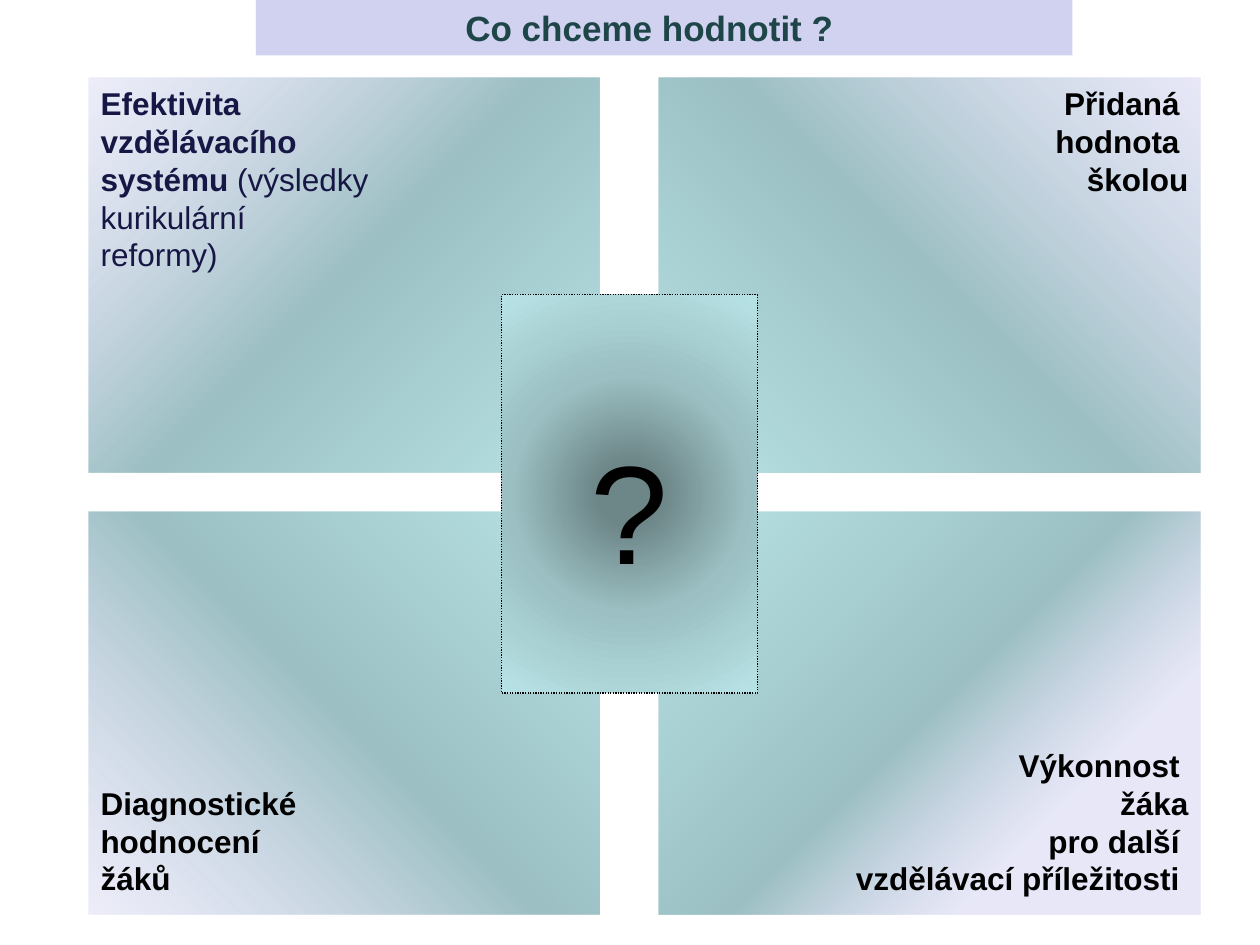
from lxml.etree import SubElement
from pptx import Presentation
from pptx.dml.color import RGBColor
from pptx.enum.dml import MSO_LINE
from pptx.enum.shapes import MSO_SHAPE
from pptx.enum.text import MSO_ANCHOR as ANCHOR, MSO_AUTO_SIZE, PP_ALIGN as ALIGN
from pptx.oxml.ns import qn
from pptx.util import Pt

LAVENDER = RGBColor(0xD1, 0xD1, 0xF0)
TEAL = RGBColor(0x9B, 0xBF, 0xC2)
AQUA = RGBColor(0xB8, 0xE3, 0xE6)
SLATE = RGBColor(0x6D, 0x86, 0x88)
NAVY = RGBColor(0x17, 0x17, 0x45)
PINE = RGBColor(0x1E, 0x46, 0x49)
BLACK = RGBColor(0, 0, 0)

TITLE = "Co chceme hodnotit ?"
TITLE_BOX = (146.2, 0, 466.6, 31.7)
CENTRE_MARK = "?"
CENTRE_BOX = (286.6, 168.5, 146.2, 227.5)

# Columns as (left, width), rows as (top, height)
COLUMNS = [(50.4, 292.3), (376.6, 309.6)]
ROWS = [(44.6, 225.4), (292.3, 230.4)]

# Column, row, text colour, start and opacity (%) of the corner colour, lines.
# A line is a list of (text, bold) runs.
QUADRANTS = [
    (0, 0, NAVY, 0, 38, [
        [("Efektivita", True)],
        [("vzdělávacího", True)],
        [("systému ", True), ("(výsledky", False)],
        [("kurikulární", False)],
        [("reformy)", False)],
    ]),
    (1, 0, BLACK, 0, 48, [
        [("Přidaná ", True)], [("hodnota ", True)], [("školou", True)],
    ]),
    (1, 1, BLACK, 26, 49, [
        [("Výkonnost ", True)],
        [("žáka", True)],
        [("pro další ", True)],
        [("vzdělávací příležitosti ", True)],
    ]),
    (0, 1, BLACK, 0, 37, [
        [("Diagnostické", True)], [("hodnocení", True)], [("žáků", True)],
    ]),
]


def write(shape, lines, *, size, color, align, anchor, spacing=None,
          top=3.6, right=7.2, bottom=3.6):
    frame = shape.text_frame
    frame.word_wrap = True
    frame.auto_size = MSO_AUTO_SIZE.NONE
    frame.vertical_anchor = anchor
    frame.margin_left, frame.margin_right = Pt(7.2), Pt(right)
    frame.margin_top, frame.margin_bottom = Pt(top), Pt(bottom)
    for index, line in enumerate(lines):
        paragraph = frame.add_paragraph() if index else frame.paragraphs[0]
        paragraph.alignment = align
        if spacing:
            paragraph.line_spacing = Pt(spacing)
        for text, bold in line:
            run = paragraph.add_run()
            run.text = text
            run.font.name = "Arial"
            run.font.size = Pt(size)
            run.font.bold = bold
            run.font.color.rgb = color


def fill_radial(shape, stops, focus):
    """Stops are (position, colour, opacity) in %; focus is l, t, r, b in %."""
    shape.fill.background()
    properties = shape.fill._xPr
    blank = properties.find(qn("a:noFill"))
    gradient = blank.makeelement(qn("a:gradFill"), {"rotWithShape": "1"})
    properties.replace(blank, gradient)
    stop_list = SubElement(gradient, qn("a:gsLst"))
    for position, color, opacity in stops:
        stop = SubElement(stop_list, qn("a:gs"), pos=str(position * 1000))
        shade = SubElement(stop, qn("a:srgbClr"), val=str(color))
        if opacity < 100:
            SubElement(shade, qn("a:alpha"), val=str(opacity * 1000))
    path = SubElement(gradient, qn("a:path"), {"path": "circle"})
    sides = {side: str(value * 1000) for side, value in zip("ltrb", focus)}
    SubElement(path, qn("a:fillToRect"), sides)


def add_panel(slide, box, stops, focus):
    panel = slide.shapes.add_shape(MSO_SHAPE.RECTANGLE, *map(Pt, box))
    panel.shadow.inherit = False
    panel.line.fill.background()
    fill_radial(panel, stops, focus)
    return panel


def main():
    deck = Presentation()
    deck.slide_width, deck.slide_height = Pt(720), Pt(540)
    slide = deck.slides.add_slide(deck.slide_layouts[5])
    outer_stops = [(50, TEAL, 100), (100, AQUA, 100)]

    for column, row, color, start, opacity, lines in QUADRANTS:
        (left, width), (top, height) = COLUMNS[column], ROWS[row]
        right_focus, bottom_focus = column * 100, row * 100
        quadrant = add_panel(
            slide, (left, top, width, height),
            [(start, LAVENDER, opacity)] + outer_stops,
            (right_focus, bottom_focus, 100 - right_focus, 100 - bottom_focus))
        write(quadrant, lines, size=18, color=color, spacing=21.6, bottom=10,
              align=(ALIGN.LEFT, ALIGN.RIGHT)[column],
              anchor=(ANCHOR.TOP, ANCHOR.BOTTOM)[row])

    centre = add_panel(slide, CENTRE_BOX, [(13, SLATE, 100)] + outer_stops,
                       (50, 50, 50, 50))
    centre.line.color.rgb = BLACK
    centre.line.width = Pt(0.75)
    centre.line.dash_style = MSO_LINE.ROUND_DOT
    write(centre, [[(CENTRE_MARK, False)]], size=80, color=BLACK,
          align=ALIGN.CENTER, anchor=ANCHOR.MIDDLE, top=20)

    title = slide.shapes.title
    title.left, title.top, title.width, title.height = map(Pt, TITLE_BOX)
    title.fill.solid()
    title.fill.fore_color.rgb = LAVENDER
    write(title, [[(TITLE, True)]], size=20, color=PINE,
          align=ALIGN.CENTER, anchor=ANCHOR.MIDDLE, right=24)

    deck.save("out.pptx")


if __name__ == "__main__":
    main()
